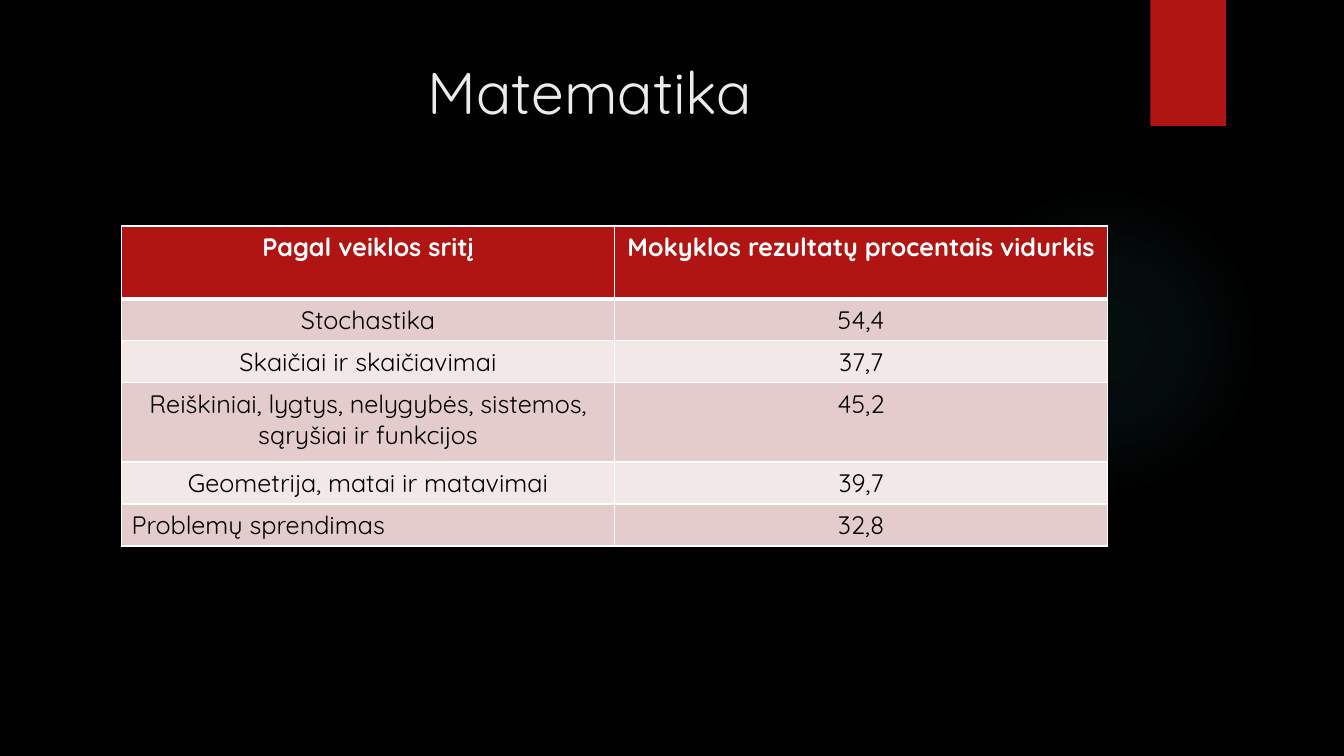
from lxml import etree
from pptx import Presentation
from pptx.dml.color import RGBColor
from pptx.enum.shapes import MSO_SHAPE
from pptx.enum.text import MSO_ANCHOR, PP_ALIGN
from pptx.oxml import parse_xml
from pptx.oxml.ns import nsdecls
from pptx.util import Pt

COLORS = {
    "background": "000000",
    "glow": "50B9C1",
    "accent": "B01513",
    "title": "EBEBEB",
    "white": "FFFFFF",
    "text": "000000",
    "band_dark": "E4CCCC",
    "band_light": "F2E8E7",
}
FONT = "Quicksand"


def write_text(frame, text, size=18, color="text", bold=False, align=PP_ALIGN.CENTER):
    frame.word_wrap = True
    para = frame.paragraphs[0]
    para.alignment = align
    span = para.add_run()
    span.text = text
    span.font.name = FONT
    span.font.size = Pt(size)
    span.font.bold = bold
    span.font.color.rgb = RGBColor.from_string(COLORS[color])


def add_border(cell, side, width):
    properties = cell._tc.get_or_add_tcPr()
    border = parse_xml(
        f'<a:{side} {nsdecls("a")} w="{Pt(width)}"><a:solidFill>'
        f'<a:srgbClr val="{COLORS["white"]}"/></a:solidFill></a:{side}>'
    )
    properties.append(border)


deck = Presentation()
deck.slide_width = Pt(960)
deck.slide_height = Pt(540)
page = deck.slides.add_slide(deck.slide_layouts[5])
page.background.fill.solid()
page.background.fill.fore_color.rgb = RGBColor.from_string(COLORS["background"])

glow = page.shapes.add_shape(MSO_SHAPE.OVAL, Pt(677.5), Pt(131.8), Pt(221.8), Pt(221.8))
glow.shadow.inherit = False
glow.line.fill.background()
glow.fill.gradient()
gradient = glow._element.spPr.find("{*}gradFill")
for child in list(gradient):
    gradient.remove(child)
stops = etree.SubElement(gradient, gradient.tag.replace("gradFill", "gsLst"))
for position, alpha in [(0, 7), (36, 6), (69, 0)]:
    stops.append(parse_xml(
        f'<a:gs {nsdecls("a")} pos="{position * 1000}"><a:srgbClr val="{COLORS["glow"]}">'
        f'<a:alpha val="{alpha * 1000}"/></a:srgbClr></a:gs>'
    ))
gradient.append(parse_xml(
    f'<a:path {nsdecls("a")} path="circle">'
    '<a:fillToRect l="50000" t="50000" r="50000" b="50000"/></a:path>'
))

ribbon = page.shapes.add_shape(MSO_SHAPE.RECTANGLE, Pt(821.8), Pt(0), Pt(54), Pt(90))
ribbon.shadow.inherit = False
ribbon.line.fill.background()
ribbon.fill.solid()
ribbon.fill.fore_color.rgb = RGBColor.from_string(COLORS["accent"])

title = page.shapes.title
title.left, title.top, title.width, title.height = Pt(51), Pt(36), Pt(741), Pt(110)
title.text_frame.vertical_anchor = MSO_ANCHOR.TOP
write_text(title.text_frame, "Matematika", size=42, color="title")

rows = [
    ("Pagal veiklos sritį", "Mokyklos rezultatų procentais vidurkis"),
    ("Stochastika", "54,4"),
    ("Skaičiai ir skaičiavimai", "37,7"),
    ("Reiškiniai, lygtys, nelygybės, sistemos, sąryšiai ir funkcijos", "45,2"),
    ("Geometrija, matai ir matavimai", "39,7"),
    ("Problemų sprendimas", "32,8"),
]
heights = [52, 30, 30, 56.5, 30, 30]
table = page.shapes.add_table(
    len(rows), 2, Pt(86.8), Pt(161.5), Pt(704.4), Pt(sum(heights))
).table
for column in table.columns:
    column.width = Pt(352.2)

for row_index, (texts, height) in enumerate(zip(rows, heights)):
    table.rows[row_index].height = Pt(height)
    header = row_index == 0
    band = "accent" if header else "band_dark" if row_index % 2 else "band_light"
    for column_index, text in enumerate(texts):
        cell = table.cell(row_index, column_index)
        last_label = row_index == len(rows) - 1 and column_index == 0
        write_text(
            cell.text_frame,
            text,
            color="white" if header else "text",
            bold=header,
            align=PP_ALIGN.LEFT if last_label else PP_ALIGN.CENTER,
        )
        for side in ("lnL", "lnR", "lnT", "lnB"):
            heavy = (row_index, side) in [(0, "lnB"), (1, "lnT")]
            add_border(cell, side, 3 if heavy else 1)
        cell.fill.solid()
        cell.fill.fore_color.rgb = RGBColor.from_string(COLORS[band])

deck.save("out.pptx")
